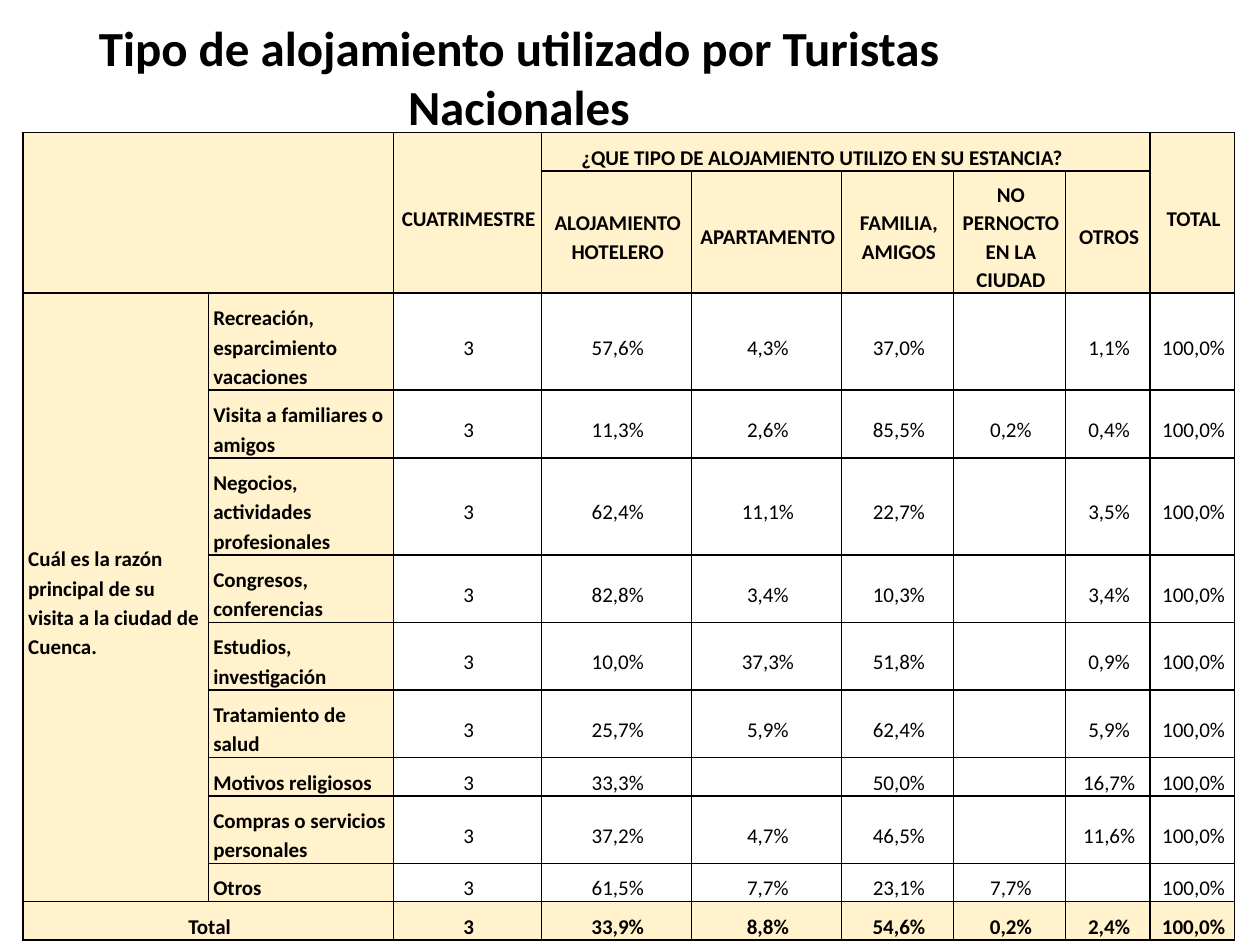
from lxml.etree import SubElement as Sub
from pptx import Presentation
from pptx.dml.color import RGBColor as Rgb
from pptx.enum.text import MSO_ANCHOR as Anchor, MSO_AUTO_SIZE as Fit, PP_ALIGN as Align
from pptx.oxml.ns import qn
from pptx.util import Pt

HUES = {"ink": "000000", "sand": "FFF2CC"}
WIDE = [105.8, 105.8, 84.6, 85.8, 85.8, 64, 64, 48.3, 48.3]
LINE = 16.75  # height of one text line
PAD = 4.8     # the rest of a row's height

HEADS = ["ALOJAMIENTO HOTELERO", "APARTAMENTO", "FAMILIA, AMIGOS",
         "NO PERNOCTO EN LA CIUDAD", "OTROS"]
ASK = "Cuál es la razón principal de su visita a la ciudad de Cuenca."

# reason, text lines, share of each kind of lodging
ROWS = [
    ("Recreación, esparcimiento vacaciones", 3, ["57,6%", "4,3%", "37,0%", "", "1,1%"]),
    ("Visita a familiares o\namigos", 2, ["11,3%", "2,6%", "85,5%", "0,2%", "0,4%"]),
    ("Negocios, actividades\nprofesionales", 3, ["62,4%", "11,1%", "22,7%", "", "3,5%"]),
    ("Congresos,\nconferencias", 2, ["82,8%", "3,4%", "10,3%", "", "3,4%"]),
    ("Estudios, investigación", 2, ["10,0%", "37,3%", "51,8%", "", "0,9%"]),
    ("Tratamiento de salud", 2, ["25,7%", "5,9%", "62,4%", "", "5,9%"]),
    ("Motivos religiosos", 1, ["33,3%", "", "50,0%", "", "16,7%"]),
    ("Compras o servicios\npersonales", 2, ["37,2%", "4,7%", "46,5%", "", "11,6%"]),
    ("Otros", 1, ["61,5%", "7,7%", "23,1%", "7,7%", ""]),
]
SUMS = ["33,9%", "8,8%", "54,6%", "0,2%", "2,4%"]
TALL = [PAD + LINE * n for n in [1, 3.88] + [row[1] for row in ROWS] + [1]]


class Deck:
    face = "Calibri"
    size = 12

    def __init__(self, wide, high):
        self.file = Presentation()
        self.file.slide_width, self.file.slide_height = Pt(wide), Pt(high)
        self.slide = self.file.slides.add_slide(self.file.slide_layouts[5])

    def style(self, para, size, bold, align):
        para.alignment = align
        font = para.font
        font.name, font.size, font.bold = self.face, Pt(size), bold
        font.color.rgb = Rgb.from_string(HUES["ink"])

    def title(self, text, x, y, w, h):
        box = self.slide.shapes.title
        box.left, box.top, box.width, box.height = Pt(x), Pt(y), Pt(w), Pt(h)
        frame = box.text_frame
        frame.text = text
        frame.word_wrap, frame.auto_size = True, Fit.NONE
        frame.vertical_anchor = Anchor.MIDDLE
        self.style(frame.paragraphs[0], 28, True, Align.CENTER)

    def table(self, x, y, wide, tall):
        frame = self.slide.shapes.add_table(
            len(tall), len(wide), Pt(x), Pt(y), Pt(sum(wide)), Pt(sum(tall)))
        self.grid = frame.table
        self.grid.first_row = self.grid.horz_banding = False
        for col, size in zip(self.grid.columns, wide):
            col.width = Pt(size)
        for row, size in zip(self.grid.rows, tall):
            row.height = Pt(size)

    def merge(self, top, left, low, right):
        self.grid.cell(top, left).merge(self.grid.cell(low, right))

    def cell(self, row, col, text="", head=False, align=Align.CENTER,
             anchor=Anchor.MIDDLE, space=1.15, edges="LRTB"):
        cell = self.grid.cell(row, col)
        cell.text = text
        cell.vertical_anchor = anchor
        cell.margin_left, cell.margin_right = Pt(2.9), Pt(1.4)
        cell.margin_top, cell.margin_bottom = Pt(5), Pt(0)
        for para in cell.text_frame.paragraphs:
            para.line_spacing = space
            self.style(para, self.size, head, align)
            if not text:
                end = para._p.get_or_add_endParaRPr()
                end.set("sz", str(self.size * 100))
        self.edge(cell, edges)
        if head:
            cell.fill.solid()
            cell.fill.fore_color.rgb = Rgb.from_string(HUES["sand"])
        else:
            cell.fill.background()

    def edge(self, cell, edges):
        """Draw the named sides of a cell and clear the others."""
        props = cell._tc.get_or_add_tcPr()
        for side in "LRTB":
            line = Sub(props, qn("a:ln" + side), w=str(Pt(1)))
            if side in edges:
                fill = Sub(line, qn("a:solidFill"))
                Sub(fill, qn("a:srgbClr"), val=HUES["ink"])
            else:
                Sub(line, qn("a:noFill"))


def main():
    deck = Deck(720, 540)
    deck.title("Tipo de alojamiento utilizado por Turistas Nacionales", 36, 14.4, 521, 59)
    deck.table(13.2, 75.8, WIDE, TALL)
    last = len(TALL) - 1

    for row in range(len(TALL)):
        for col in (0, 1):
            deck.cell(row, col, head=True)
    for col in range(2, 9):
        deck.cell(0, col, head=True)
        deck.cell(1, col, head=True)
    deck.cell(0, 2, "CUATRIMESTRE", True)
    deck.cell(0, 3, "¿QUE TIPO DE ALOJAMIENTO UTILIZO EN SU ESTANCIA?", True,
              Align.RIGHT, Anchor.BOTTOM, edges="LTB")
    for col in (4, 5, 6):
        deck.cell(0, col, head=True, edges="TB")
    deck.cell(0, 7, head=True, edges="RTB")
    deck.cell(0, 8, "TOTAL", True)
    for col, text in enumerate(HEADS, 3):
        deck.cell(1, col, text, True, space=1.11)

    deck.cell(2, 0, ASK, True, Align.LEFT)
    for row, (why, _, parts) in enumerate(ROWS, 2):
        deck.cell(row, 1, why, True, Align.LEFT)
        for col, text in enumerate(["3", *parts, "100,0%"], 2):
            deck.cell(row, col, text)

    deck.cell(last, 0, "Total", True, anchor=Anchor.BOTTOM)
    for col, text in enumerate(["3", *SUMS, "100,0%"], 2):
        deck.cell(last, col, text, True)

    for span in [(0, 0, 1, 1), (0, 2, 1, 2), (0, 3, 0, 6), (0, 8, 1, 8),
                 (2, 0, last - 1, 0), (last, 0, last, 1)]:
        deck.merge(*span)
    deck.file.save("out.pptx")


if __name__ == "__main__":
    main()
